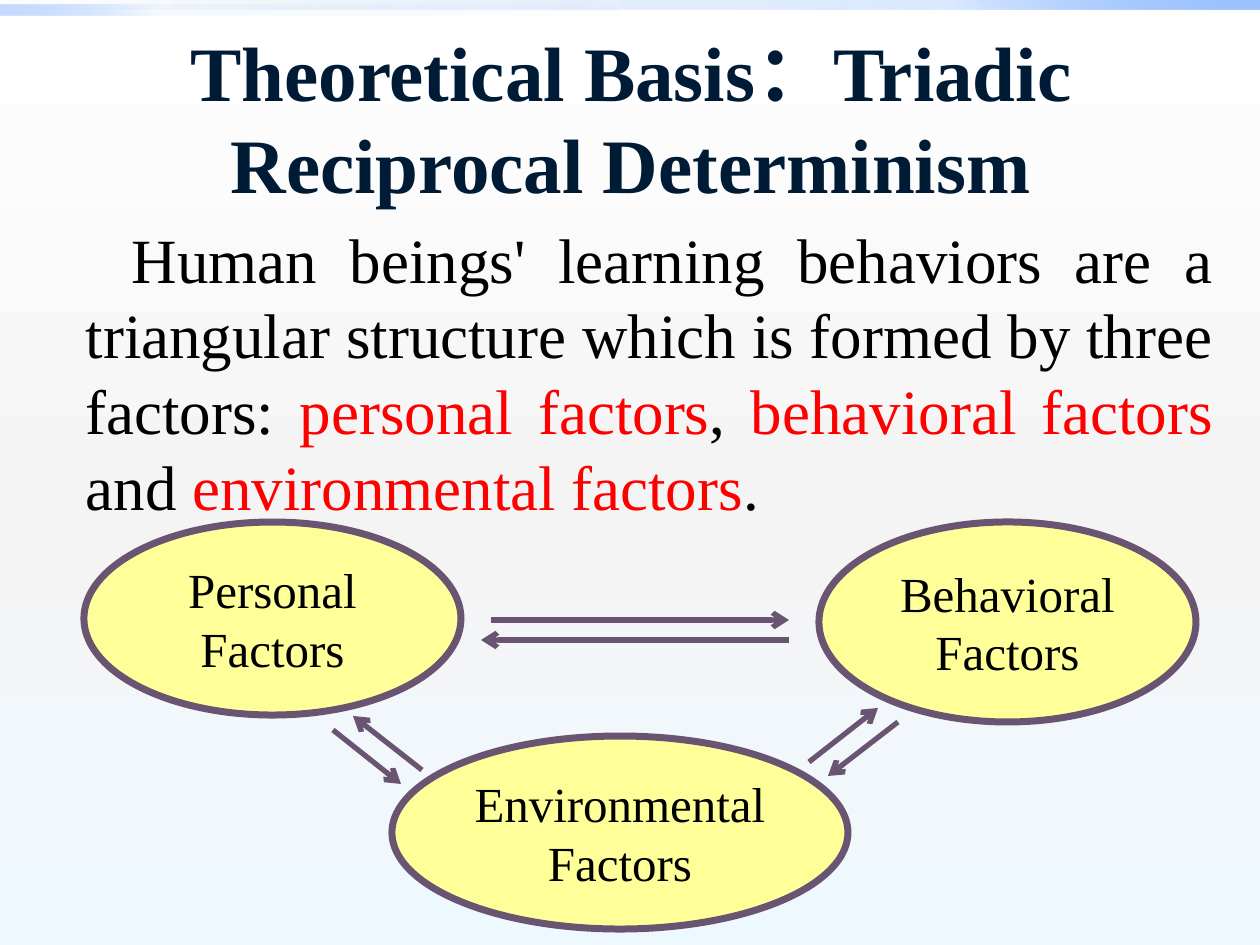
from dataclasses import dataclass

from lxml import etree
from pptx import Presentation
from pptx.dml.color import RGBColor
from pptx.enum.shapes import MSO_CONNECTOR, MSO_SHAPE
from pptx.enum.text import MSO_ANCHOR, MSO_AUTO_SIZE, PP_ALIGN
from pptx.oxml.ns import qn
from pptx.util import Emu, Pt

RECTANGLE, OVAL = MSO_SHAPE.RECTANGLE, MSO_SHAPE.OVAL
STRAIGHT = MSO_CONNECTOR.STRAIGHT
MIDDLE, TOP = MSO_ANCHOR.MIDDLE, MSO_ANCHOR.TOP
CENTER, JUSTIFY = PP_ALIGN.CENTER, PP_ALIGN.JUSTIFY
NO_AUTOFIT = MSO_AUTO_SIZE.NONE

EMU_PER_PX = 914400 / 126
SERIF = "Times New Roman"
CJK = "Noto Sans CJK TC"
COLORS = {
    "title": "001B36",
    "text": "000000",
    "highlight": "FF0000",
    "oval": "FFFF99",
    "outline": "695572",
    "bar_dark": "0058B7",
    "bar_mid": "4F95FF",
    "bar_light": "9EC2FF",
    "back_top": "FFFFFF",
    "back_mid": "F4F4F4",
    "back_bottom": "EEF9FF",
}


@dataclass(frozen=True)
class Box:
    left: int
    top: int
    width: int
    height: int


@dataclass(frozen=True)
class Stop:
    percent: int
    color: str
    opacity: int = 100


@dataclass(frozen=True)
class Bar:
    box: Box
    angle: int
    opacities: tuple[int, int, int]


@dataclass(frozen=True)
class Factor:
    name: str
    box: Box


@dataclass(frozen=True)
class Arrow:
    start: tuple[int, int]
    end: tuple[int, int]


BACKGROUND = [Stop(0, "back_top"), Stop(55, "back_mid"), Stop(100, "back_bottom")]
BARS = [
    Bar(Box(0, 0, 1260, 10), 315, (0, 20, 100)),
    Bar(Box(0, 5, 630, 10), 135, (0, 5, 60)),
]
TITLE_BOX = Box(64, 0, 1134, 234)
BODY_BOX = Box(25, 214, 1201, 318)
FACTORS = [
    Factor("Personal", Box(84, 522, 377, 193)),
    Factor("Behavioral", Box(819, 522, 377, 200)),
    Factor("Environmental", Box(392, 736, 456, 193)),
]
ARROWS = [
    Arrow((333, 730), (401, 784)),
    Arrow((422, 770), (353, 716)),
    Arrow((809, 762), (878, 708)),
    Arrow((898, 722), (828, 776)),
    Arrow((491, 620), (789, 620)),
    Arrow((789, 640), (481, 640)),
]


def px(length: int) -> Emu:
    return Emu(round(length * EMU_PER_PX))


def rgb(name: str) -> RGBColor:
    return RGBColor.from_string(COLORS[name])


def place(shape, box: Box) -> None:
    shape.left, shape.top = px(box.left), px(box.top)
    shape.width, shape.height = px(box.width), px(box.height)


def prepare_frame(shape, *, anchor):
    frame = shape.text_frame
    frame.word_wrap = True
    frame.auto_size = NO_AUTOFIT
    frame.vertical_anchor = anchor
    return frame


def add_text(paragraph, text: str, *, size: int, color: str = "text",
             font: str = SERIF, bold: bool = False) -> None:
    run = paragraph.add_run()
    run.text = text
    run.font.size = Pt(size)
    run.font.bold = bold
    run.font.name = font
    run.font.color.rgb = rgb(color)
    east_asian = etree.SubElement(run.font._element, qn("a:ea"))
    east_asian.set("typeface", font)


def set_gradient(fill, owner, stops: list[Stop], angle: int) -> None:
    """Fill with the given stops; owner is the element that holds the fill."""
    fill.gradient()
    gradient = next(owner.iter(qn("a:gradFill")))
    stop_list = gradient.find(qn("a:gsLst"))
    for old_stop in list(stop_list):
        stop_list.remove(old_stop)
    for stop in stops:
        item = etree.SubElement(stop_list, qn("a:gs"), pos=str(stop.percent * 1000))
        color = etree.SubElement(item, qn("a:srgbClr"), val=COLORS[stop.color])
        if stop.opacity < 100:
            etree.SubElement(color, qn("a:alpha"), val=str(stop.opacity * 1000))
    gradient.find(qn("a:lin")).set("ang", str(angle * 60000))


def add_shape(slide, kind, box: Box):
    shape = slide.shapes.add_shape(kind, 0, 0, 0, 0)
    place(shape, box)
    shape.shadow.inherit = False
    return shape


def add_bar(slide, bar: Bar, depth: int) -> None:
    shape = add_shape(slide, RECTANGLE, bar.box)
    shape.line.fill.background()
    colors = ("bar_dark", "bar_mid", "bar_light")
    stops = [Stop(*parts) for parts in zip((0, 75, 100), colors, bar.opacities)]
    set_gradient(shape.fill, shape._element, stops, bar.angle)
    slide.shapes._spTree.insert(2 + depth, shape._element)


def add_title(slide) -> None:
    title = slide.shapes.title
    place(title, TITLE_BOX)
    paragraph = prepare_frame(title, anchor=MIDDLE).paragraphs[0]
    paragraph.alignment = CENTER
    for text, font in (("Theoretical Basis", SERIF), ("：", CJK),
                       ("Triadic Reciprocal Determinism", SERIF)):
        add_text(paragraph, text, size=44, color="title", font=font, bold=True)


def add_body(slide) -> None:
    body = slide.placeholders[1]
    place(body, BODY_BOX)
    paragraph = prepare_frame(body, anchor=TOP).paragraphs[0]
    paragraph.alignment = JUSTIFY
    paragraph.space_before = Pt(0)
    properties = paragraph._p.get_or_add_pPr()
    properties.set("marL", str(px(48)))
    properties.set("indent", str(px(46)))
    etree.SubElement(properties, qn("a:buNone"))
    for text, color in (
        ("Human beings' learning behaviors are a triangular structure "
         "which is formed by three factors: ", "text"),
        ("personal factors", "highlight"),
        (", ", "text"),
        ("behavioral factors", "highlight"),
        (" and ", "text"),
        ("environmental factors", "highlight"),
        (".", "text"),
    ):
        add_text(paragraph, text, size=36, color=color)


def add_factor(slide, factor: Factor) -> None:
    oval = add_shape(slide, OVAL, factor.box)
    oval.fill.solid()
    oval.fill.fore_color.rgb = rgb("oval")
    oval.line.color.rgb = rgb("outline")
    oval.line.width = Pt(4)
    frame = prepare_frame(oval, anchor=MIDDLE)
    frame.margin_left = frame.margin_right = 0
    for paragraph, text in ((frame.paragraphs[0], factor.name),
                            (frame.add_paragraph(), "Factors")):
        paragraph.alignment = CENTER
        add_text(paragraph, text, size=28)


def add_arrow(slide, arrow: Arrow) -> None:
    ends = [px(value) for value in (*arrow.start, *arrow.end)]
    connector = slide.shapes.add_connector(STRAIGHT, *ends)
    connector.line.color.rgb = rgb("outline")
    connector.line.width = Pt(3)
    etree.SubElement(connector.line._get_or_add_ln(), qn("a:tailEnd"), type="arrow")
    etree.SubElement(connector._element.spPr, qn("a:effectLst"))


def main() -> None:
    presentation = Presentation()
    presentation.slide_width, presentation.slide_height = px(1260), px(945)
    slide = presentation.slides.add_slide(presentation.slide_layouts[1])
    set_gradient(slide.background.fill, slide._element, BACKGROUND, 90)
    for depth, bar in enumerate(BARS):
        add_bar(slide, bar, depth)
    add_title(slide)
    add_body(slide)
    for factor in FACTORS:
        add_factor(slide, factor)
    for arrow in ARROWS:
        add_arrow(slide, arrow)
    presentation.save("out.pptx")


if __name__ == "__main__":
    main()
